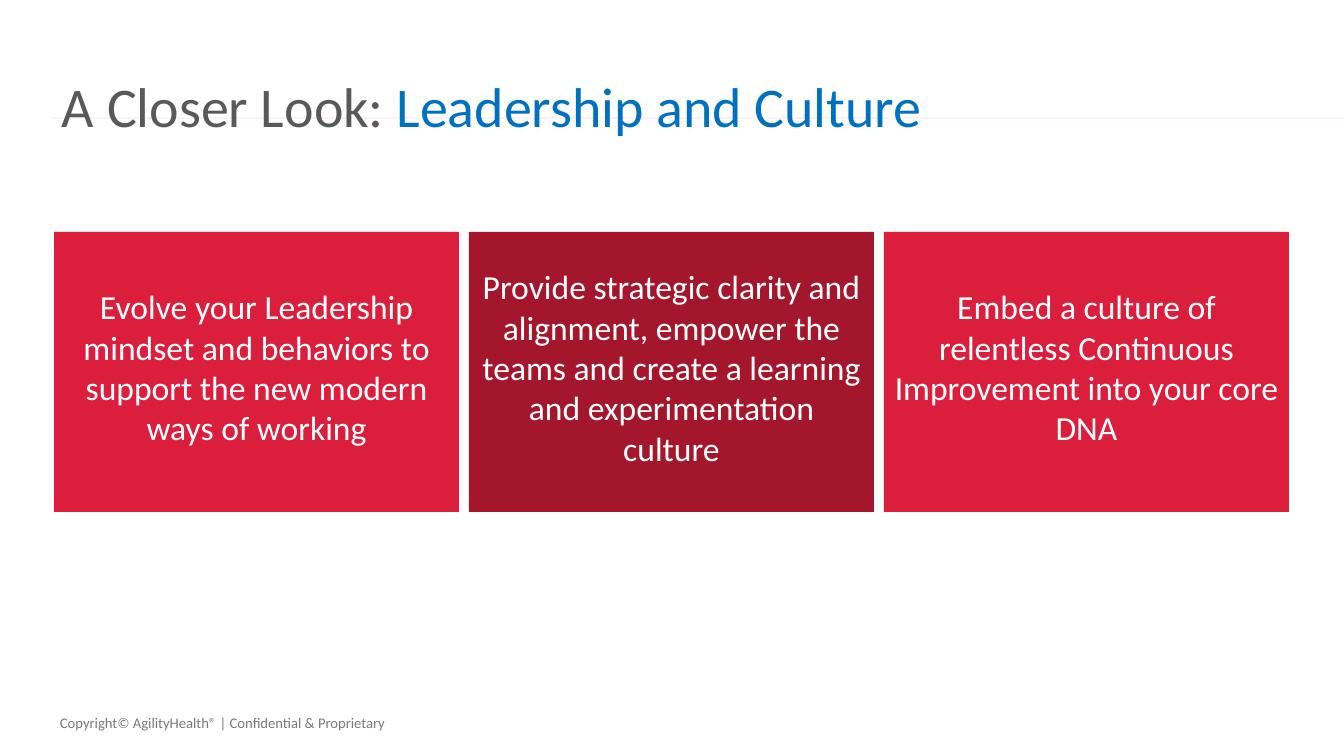
from dataclasses import dataclass

from lxml.etree import SubElement
from pptx import Presentation
from pptx.dml.color import RGBColor
from pptx.enum.shapes import MSO_CONNECTOR as CONN, MSO_SHAPE as SHAPE
from pptx.enum.text import MSO_ANCHOR as ANCHOR, MSO_AUTO_SIZE as AUTO, PP_ALIGN as ALIGN
from pptx.oxml.ns import qn
from pptx.slide import Slide
from pptx.text.text import TextFrame, _Paragraph as Paragraph
from pptx.util import Emu, Pt

EMU_PER_PX = 914400 / 100.8
FONT = "Calibri"
CARD_LEFT, CARD_TOP, CARD_W, CARD_H, CARD_GAP = 54, 232, 405, 280, 10


@dataclass(frozen=True)
class Card:
    """A coloured box with one statement."""

    text: str
    fill: str


CARDS = [
    Card("Evolve your Leadership mindset and behaviors to support the new modern ways of working",
         "DB1E3C"),
    Card("Provide strategic clarity and alignment, empower the teams and create a learning "
         "and experimentation culture", "A4162C"),
    Card("Embed a culture of relentless Continuous Improvement into your core DNA", "DB1E3C"),
]


def px(n: int) -> Emu:
    """Turn pixels into EMU."""
    return Emu(round(n * EMU_PER_PX))


def rgb(color: str) -> RGBColor:
    """Turn a hex string into a colour."""
    return RGBColor.from_string(color)


def set_frame(tf: TextFrame, left: int, top: int, right: int, bottom: int, anchor: ANCHOR) -> None:
    """Set wrapping, insets and anchor of a text frame."""
    tf.word_wrap = True
    tf.auto_size = AUTO.NONE
    tf.margin_left, tf.margin_top = px(left), px(top)
    tf.margin_right, tf.margin_bottom = px(right), px(bottom)
    tf.vertical_anchor = anchor


def add_run(p: Paragraph, text: str, size: float, color: str) -> None:
    """Add one formatted run to a paragraph."""
    r = p.add_run()
    r.text = text
    r.font.name = FONT
    r.font.size = Pt(size)
    r.font.color.rgb = rgb(color)


def add_rule(slide: Slide) -> None:
    """Draw the pale line behind the title."""
    line = slide.shapes.add_connector(CONN.STRAIGHT, px(52), px(118), px(1344), px(118))
    line.line.color.rgb = rgb("FDF1F3")
    line.line.width = Pt(2)
    SubElement(line._element.spPr, qn("a:effectLst"))


def add_footer(slide: Slide) -> None:
    """Write the copyright line."""
    tf = slide.shapes.add_textbox(px(60), px(714), px(454), px(28)).text_frame
    set_frame(tf, 0, 0, 0, 0, ANCHOR.TOP)
    add_run(tf.paragraphs[0], "Copyright© AgilityHealth® | Confidential & Proprietary", 10.5, "7A7A7A")


def set_title(slide: Slide) -> None:
    """Place and write the two-colour title."""
    sp = slide.shapes.title
    sp.left, sp.top, sp.width, sp.height = px(52), px(25), px(1239), px(84)
    set_frame(sp.text_frame, 10, 5, 10, 5, ANCHOR.MIDDLE)
    p = sp.text_frame.paragraphs[0]
    p.alignment = ALIGN.LEFT
    p.line_spacing = 2.12
    add_run(p, "A Closer Look: ", 40, "58595B")
    add_run(p, "Leadership and Culture", 40, "0070C0")


def add_card(slide: Slide, card: Card, column: int) -> None:
    """Draw a card in its column."""
    left = CARD_LEFT + column * (CARD_W + CARD_GAP)
    sp = slide.shapes.add_shape(SHAPE.RECTANGLE, px(left), px(CARD_TOP), px(CARD_W), px(CARD_H))
    sp.shadow.inherit = False
    sp.fill.solid()
    sp.fill.fore_color.rgb = rgb(card.fill)
    sp.line.fill.background()
    set_frame(sp.text_frame, 10, 0, 10, 10, ANCHOR.MIDDLE)
    p = sp.text_frame.paragraphs[0]
    p.alignment = ALIGN.CENTER
    add_run(p, card.text, 24, "FFFFFF")


def main() -> None:
    """Build and save the slide."""
    prs = Presentation()
    prs.slide_width, prs.slide_height = px(1344), px(756)
    slide = prs.slides.add_slide(prs.slide_layouts.get_by_name("Title Only"))
    add_rule(slide)
    add_footer(slide)
    set_title(slide)
    title = slide.shapes.title._element
    title.getparent().append(title)
    for column, card in enumerate(CARDS):
        add_card(slide, card, column)
    prs.save("out.pptx")


if __name__ == "__main__":
    main()
